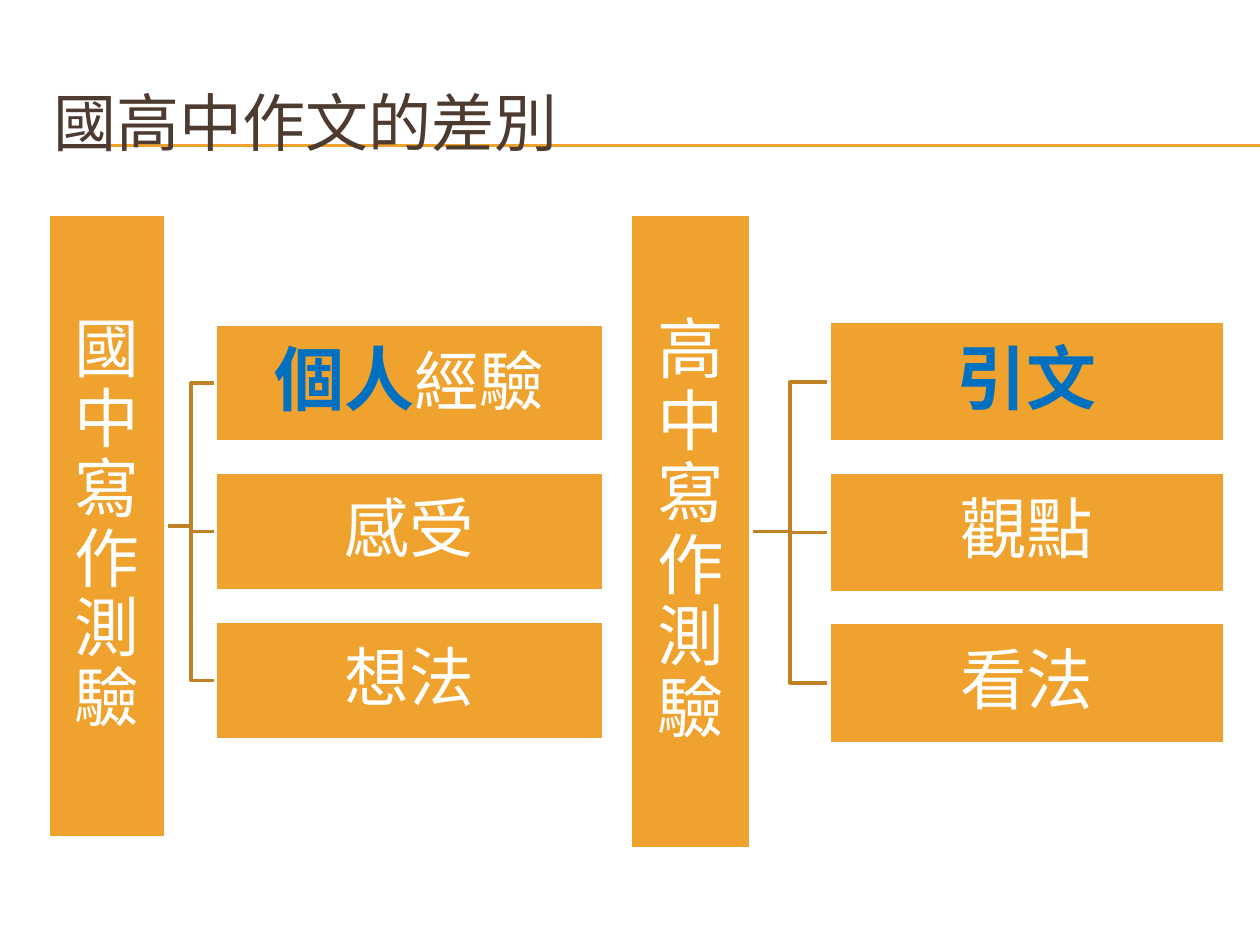
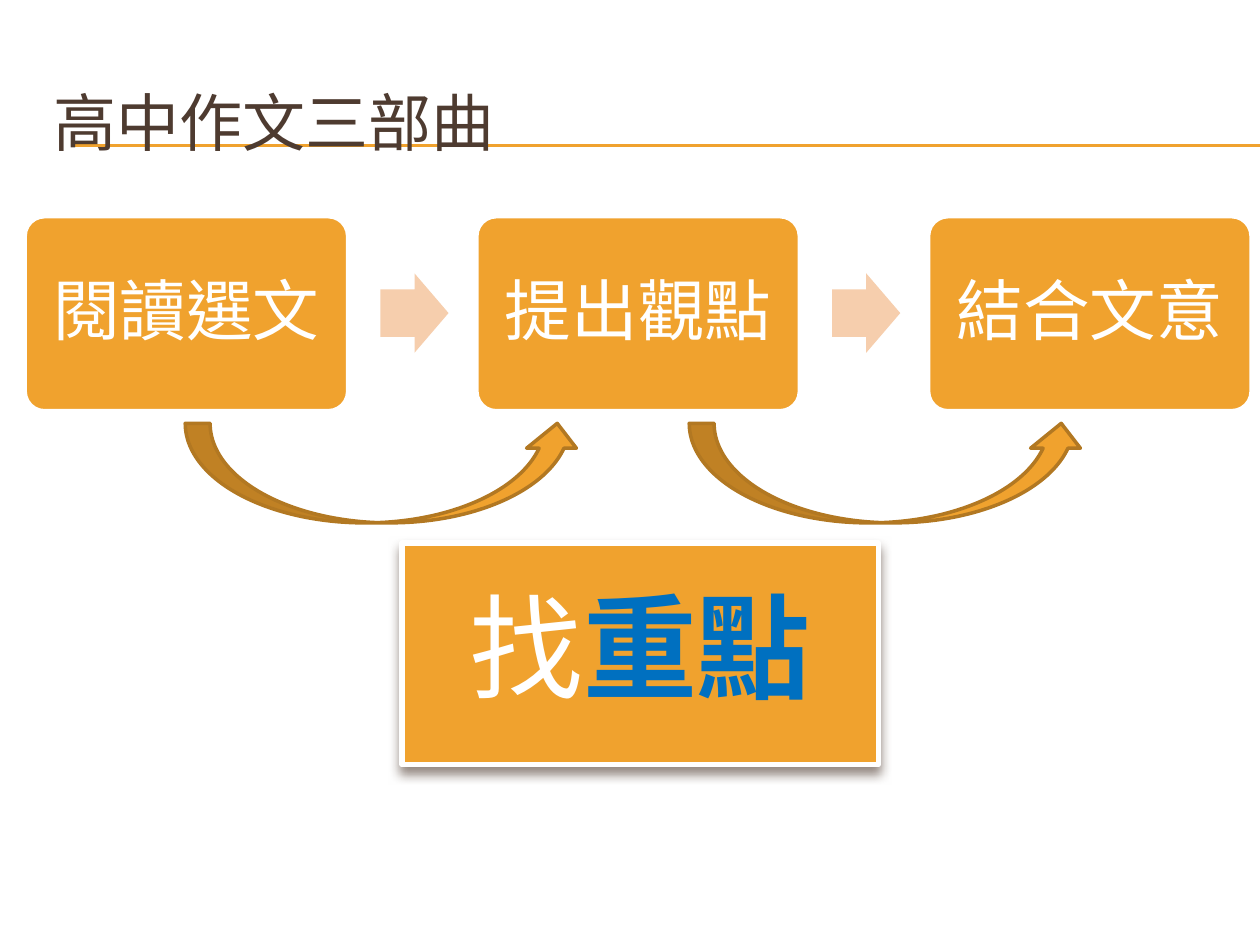
import pptx
import pptx.dml.color
import pptx.enum.lang
import pptx.enum.shapes
import pptx.enum.text
import pptx.oxml
import pptx.oxml.ns
import pptx.util

SHAPES = pptx.enum.shapes.MSO_SHAPE
FONT = "Cabin"
COLORS = {
    "orange": "F0A22E",
    "bracket": "C08225",
    "arrow": "F6CEAD",
    "curve_line": "B27822",
    "title": "4E3B30",
    "white": "FFFFFF",
    "blue": "0070C0",
}
SLIDE_WIDTH, SLIDE_HEIGHT = 10, 7.5
RULE_LEFT, RULE_HEIGHTS = 0.56, (1.15, 1.16)

# A text is a list of (words, size, colour, bold) runs.
COMPARISON_TITLE = "國高中作文的差別"
COMPARISON = [
    {
        "bar": (0.38, 1.7, 0.94, 4.95),
        "heading": [("國中寫作測驗", 37, "white", False)],
        "box": (1.71, 2.57, 3.08, 0.94),
        "pitch": 1.18,
        "branches": [
            [("個人", 40, "blue", True), ("經驗", 37, "white", False)],
            [("感受", 37, "white", False)],
            [("想法", 37, "white", False)],
        ],
    },
    {
        "bar": (5.0, 1.7, 0.96, 5.04),
        "heading": [("高中寫作測驗", 38, "white", False)],
        "box": (6.58, 2.55, 3.14, 0.96),
        "pitch": 1.195,
        "branches": [
            [("引文", 40, "blue", True)],
            [("觀點", 38, "white", False)],
            [("看法", 38, "white", False)],
        ],
    },
]

STEPS_TITLE = "高中作文三部曲"
STEPS = ["閱讀選文", "提出觀點", "結合文意"]
STEP_BOX, STEP_PITCH = (0.2, 1.72, 2.56, 1.54), 3.585
STEP_ARROW = (3.02, 2.17, 0.54, 0.63)
CURVED_ARROW, CURVED_PITCH = (1.47, 3.36, 3.15, 0.79), 4
KEY_BOX = (3.19, 4.31, 3.78, 1.76)
KEY_TEXT = [("找", 65, "white", False), ("重點", 65, "blue", True)]


def rgb(name):
    return pptx.dml.color.RGBColor.from_string(COLORS[name])


def inches(*lengths):
    return [pptx.util.Inches(length) for length in lengths]


def write(shape, runs, inset, centred=True):
    frame = shape.text_frame
    frame.word_wrap = True
    frame.vertical_anchor = pptx.enum.text.MSO_ANCHOR.MIDDLE
    for side in ("left", "right", "top", "bottom"):
        setattr(frame, f"margin_{side}", pptx.util.Inches(inset))
    paragraph = frame.paragraphs[0]
    if centred:
        paragraph.alignment = pptx.enum.text.PP_ALIGN.CENTER
        paragraph.line_spacing = 0.9
    for words, size, color, bold in runs:
        run = paragraph.add_run()
        run.text = words
        run.font.name = FONT
        run.font.size = pptx.util.Pt(size)
        run.font.bold = bold
        run.font.color.rgb = rgb(color)
        run.font.language_id = pptx.enum.lang.MSO_LANGUAGE_ID.TRADITIONAL_CHINESE
        east_asian = pptx.oxml.parse_xml(
            f'<a:ea {pptx.oxml.ns.nsdecls("a")} typeface="{FONT}"/>')
        run.font._element.find(pptx.oxml.ns.qn("a:latin")).addnext(east_asian)


def add_block(slide, kind, place, fill="orange", line="white", width=2):
    shape = slide.shapes.add_shape(kind, *inches(*place))
    shape.shadow.inherit = False
    shape.fill.solid()
    shape.fill.fore_color.rgb = rgb(fill)
    if line:
        shape.line.color.rgb = rgb(line)
        shape.line.width = pptx.util.Pt(width)
    else:
        shape.line.fill.background()
    return shape


def add_titled_slide(presentation, title):
    slide = presentation.slides.add_slide(presentation.slide_layouts[6])
    for height in RULE_HEIGHTS:
        rule = slide.shapes.add_connector(
            pptx.enum.shapes.MSO_CONNECTOR.STRAIGHT,
            *inches(RULE_LEFT, height, SLIDE_WIDTH, height))
        rule.line.color.rgb = rgb("orange")
        rule.line.width = pptx.util.Pt(0.75)
        rule._element.spPr.append(pptx.oxml.parse_xml(
            f'<a:effectLst {pptx.oxml.ns.nsdecls("a")}/>'))
    box = slide.shapes.add_textbox(*inches(0.33, 0.5, 9.5, 0.92))
    write(box, [(title, 36, "title", False)], 0.1, centred=False)
    return slide


def add_bracket(slide, start, trunk, end_left, ends):
    """Join one start point to every end height through a shared vertical."""
    builder = slide.shapes.build_freeform(*inches(start, trunk))
    middle = (start + end_left) / 2
    for end in ends:
        builder.move_to(*inches(start, trunk))
        corners = [(middle, trunk), (middle, end), (end_left, end)]
        builder.add_line_segments([inches(*corner) for corner in corners], close=False)
    bracket = builder.convert_to_shape()
    bracket.shadow.inherit = False
    bracket.fill.background()
    bracket.line.color.rgb = rgb("bracket")
    bracket.line.width = pptx.util.Pt(2)


def add_comparison(slide, group):
    bar_left, bar_top, bar_width, bar_height = group["bar"]
    left, top, width, height = group["box"]
    tops = [top + row * group["pitch"] for row in range(len(group["branches"]))]
    add_bracket(slide, bar_left + bar_width, bar_top + bar_height / 2,
                left, [box_top + height / 2 for box_top in tops])
    write(add_block(slide, SHAPES.RECTANGLE, group["bar"]), group["heading"], 0.03)
    for box_top, runs in zip(tops, group["branches"]):
        box = add_block(slide, SHAPES.RECTANGLE, (left, box_top, width, height))
        write(box, runs, 0.03)


def shifted(place, distance):
    return (place[0] + distance, *place[1:])


def add_steps(slide):
    for column, step in enumerate(STEPS):
        box = add_block(slide, SHAPES.ROUNDED_RECTANGLE,
                        shifted(STEP_BOX, column * STEP_PITCH))
        box.adjustments[0] = 0.1
        write(box, [(step, 38, "white", False)], 0.16)
    for gap in range(len(STEPS) - 1):
        arrow = add_block(slide, SHAPES.RIGHT_ARROW,
                          shifted(STEP_ARROW, gap * STEP_PITCH), "arrow", None)
        arrow.adjustments[0] = 0.6
        add_block(slide, SHAPES.CURVED_UP_ARROW,
                  shifted(CURVED_ARROW, gap * CURVED_PITCH), line="curve_line")


def add_key_box(slide):
    box = add_block(slide, SHAPES.RECTANGLE, KEY_BOX, width=3)
    write(box, KEY_TEXT, 0.05)
    effects = box._element.spPr.find(pptx.oxml.ns.qn("a:effectLst"))
    effects.append(pptx.oxml.parse_xml(
        f'<a:outerShdw {pptx.oxml.ns.nsdecls("a")} blurRad="{pptx.util.Pt(6)}" '
        f'dist="{pptx.util.Pt(4)}" dir="5400000" rotWithShape="0">'
        f'<a:srgbClr val="{COLORS["title"]}"><a:alpha val="60000"/></a:srgbClr>'
        '</a:outerShdw>'))


def main():
    presentation = pptx.Presentation()
    presentation.slide_width, presentation.slide_height = inches(SLIDE_WIDTH, SLIDE_HEIGHT)
    comparison = add_titled_slide(presentation, COMPARISON_TITLE)
    for group in COMPARISON:
        add_comparison(comparison, group)
    steps = add_titled_slide(presentation, STEPS_TITLE)
    add_steps(steps)
    add_key_box(steps)
    presentation.save("out.pptx")


if __name__ == "__main__":
    main()
